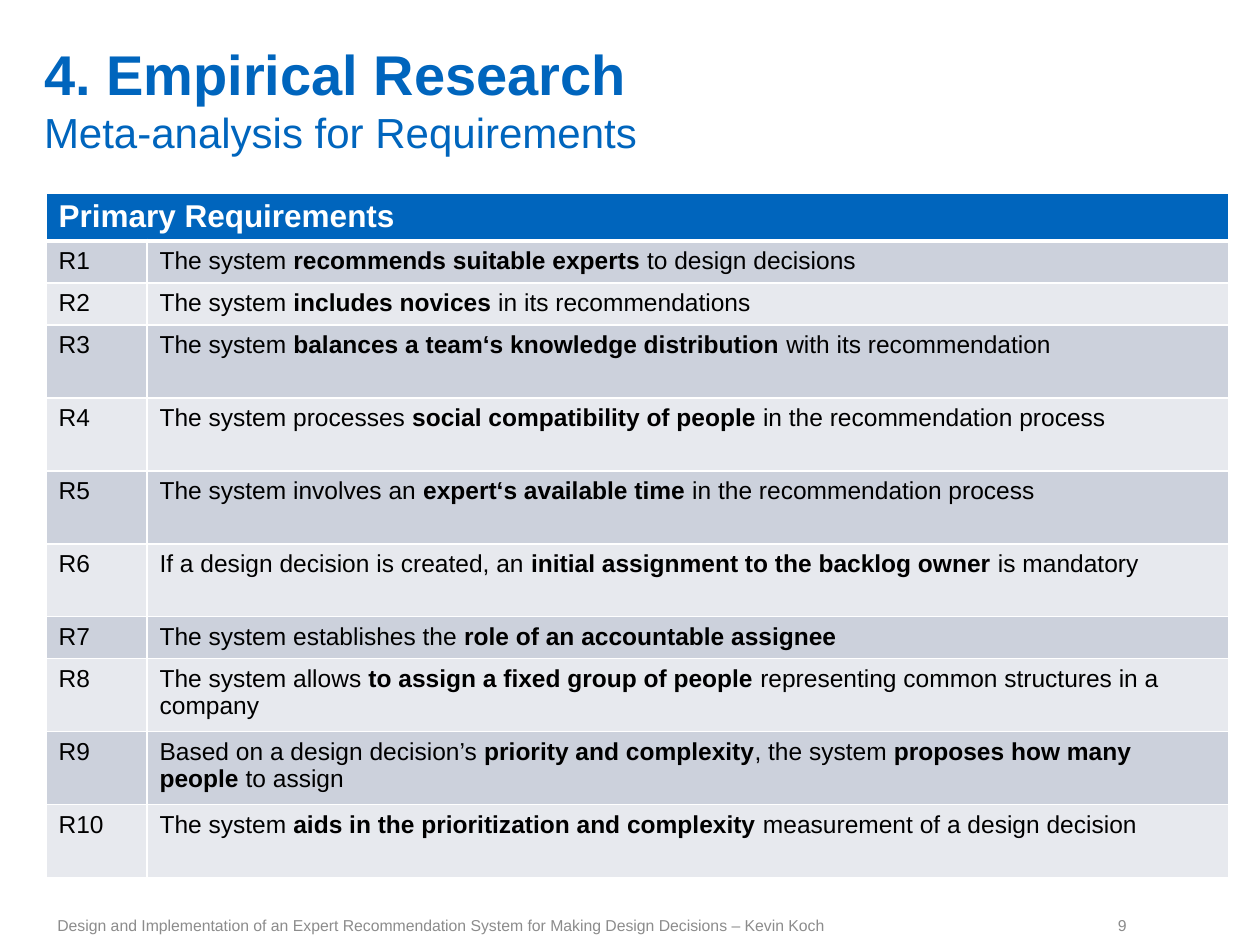
from lxml import etree
from pptx import Presentation
from pptx.dml.color import RGBColor
from pptx.enum.text import MSO_ANCHOR, MSO_AUTO_SIZE, PP_ALIGN
from pptx.oxml.ns import qn
from pptx.util import Pt

LEFT, RIGHT = PP_ALIGN.LEFT, PP_ALIGN.RIGHT
MIDDLE, BOTTOM = MSO_ANCHOR.MIDDLE, MSO_ANCHOR.BOTTOM
NO_AUTOFIT = MSO_AUTO_SIZE.NONE
TITLE_ONLY = 5

TITLE = "4. Empirical Research"
SUBTITLE = "Meta-analysis for Requirements"
TABLE_HEAD = "Primary Requirements"
SHORT, TALL = 42, 73
HEAD_HEIGHT = 47
COLUMNS = (101, 1082)
BOLD_MARK = "*"
REQUIREMENTS = [
    (SHORT, "The system *recommends suitable experts *to design decisions"),
    (SHORT, "The system *includes novices *in its recommendations"),
    (TALL, "The system *balances a team‘s knowledge distribution *with its recommendation"),
    (TALL, "The system processes *social compatibility of people *in the recommendation process"),
    (TALL, "The system involves an *expert‘s available time *in the recommendation process"),
    (TALL, "If a design decision is created, an *initial assignment to the backlog owner *is mandatory"),
    (SHORT, "The system establishes the *role of an accountable assignee"),
    (TALL, "The system allows *to assign a fixed group of people *representing common structures in a company"),
    (TALL, "Based on a design decision’s *priority and complexity*, the system *proposes how many people *to assign"),
    (TALL, "The system *aids in the prioritization and complexity* measurement of a design decision"),
]
FOOTERS = [
    ("Design and Implementation of an Expert Recommendation System for Making Design Decisions – Kevin Koch",
     (45, 905, 1009, 40), LEFT),
    ("9", (1054, 905, 85, 40), RIGHT),
]

THEME = {
    "font": "Arial",
    "white": "FFFFFF",
    "bands": ("CCD1DC", "E7E9EE"),
    "blue": "0065BD",
    "title": {"size": 32, "color": "0065BD", "bold": True},
    "subtitle": {"size": 24, "color": "0065BD", "bold": False},
    "head": {"size": 18, "color": "FFFFFF", "bold": True},
    "body": {"size": 14, "color": "000000", "bold": False},
    "strong": {"size": 14, "color": "000000", "bold": True},
    "footer": {"size": 9, "color": "8C8C8C", "bold": False},
}


def px(value):
    return round(value * 914400 / 126)


def place(shape, bounds):
    for name, value in zip(("left", "top", "width", "height"), bounds):
        setattr(shape, name, px(value))


def add_span(para, text, style):
    look = THEME[style]
    span = para.add_run()
    span.text = text
    values = {"name": THEME["font"], "size": Pt(look["size"]), "bold": look["bold"]}
    for name, value in values.items():
        setattr(span.font, name, value)
    span.font.color.rgb = RGBColor.from_string(look["color"])


def add_marked_text(para, text):
    for index, part in enumerate(text.split(BOLD_MARK)):
        add_span(para, part, "strong" if index % 2 else "body")


def format_cell(cell, color, bottom_width=1):
    properties = cell._tc.get_or_add_tcPr()
    for side, width in (("L", 1), ("R", 1), ("T", 1), ("B", bottom_width)):
        line = etree.SubElement(properties, qn(f"a:ln{side}"), w=str(Pt(width)))
        fill = etree.SubElement(line, qn("a:solidFill"))
        etree.SubElement(fill, qn("a:srgbClr"), val=THEME["white"])
    cell.fill.solid()
    cell.fill.fore_color.rgb = RGBColor.from_string(color)


def add_title(page):
    title = page.shapes.title
    place(title, (44, 39, 1080, 118))
    frame = title.text_frame
    values = {"margin_left": 0, "margin_top": 0, "margin_right": 0, "margin_bottom": 0,
              "vertical_anchor": BOTTOM, "word_wrap": True, "auto_size": NO_AUTOFIT}
    for name, value in values.items():
        setattr(frame, name, value)
    para = frame.paragraphs[0]
    para.alignment = LEFT
    add_span(para, TITLE, "title")
    para.add_line_break()
    add_span(para, SUBTITLE, "subtitle")


def add_requirements(page):
    heights = [HEAD_HEIGHT] + [height for height, text in REQUIREMENTS]
    bounds = (46, 193, sum(COLUMNS), sum(heights))
    table = page.shapes.add_table(len(heights), len(COLUMNS), *map(px, bounds)).table
    for column, width in zip(table.columns, COLUMNS):
        column.width = px(width)
    for row, height in zip(table.rows, heights):
        row.height = px(height)

    head = table.cell(0, 0)
    head.merge(table.cell(0, 1))
    for cell in table.rows[0].cells:
        format_cell(cell, THEME["blue"], 3)
    add_span(head.text_frame.paragraphs[0], TABLE_HEAD, "head")

    for number, (height, text) in enumerate(REQUIREMENTS, 1):
        for column, content in enumerate((f"R{number}", text)):
            cell = table.cell(number, column)
            format_cell(cell, THEME["bands"][(number - 1) % 2])
            add_marked_text(cell.text_frame.paragraphs[0], content)


def add_footers(page):
    for text, bounds, alignment in FOOTERS:
        box = page.shapes.add_textbox(*map(px, bounds))
        box.text_frame.word_wrap = True
        box.text_frame.vertical_anchor = MIDDLE
        para = box.text_frame.paragraphs[0]
        para.alignment = alignment
        add_span(para, text, "footer")


def main():
    deck = Presentation()
    deck.slide_width, deck.slide_height = px(1260), px(945)
    page = deck.slides.add_slide(deck.slide_layouts[TITLE_ONLY])
    add_title(page)
    add_requirements(page)
    add_footers(page)
    deck.save("out.pptx")


if __name__ == "__main__":
    main()
